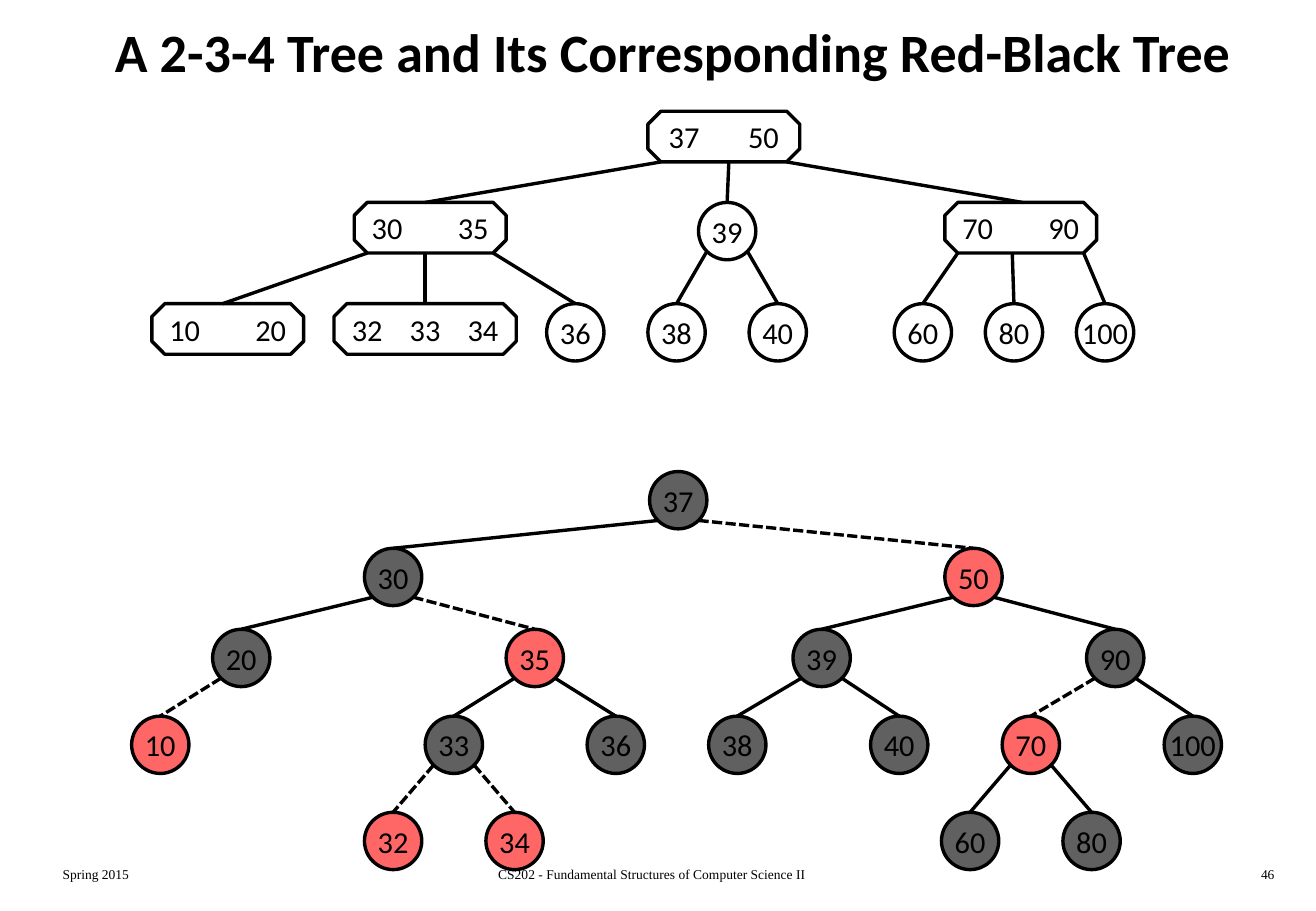
from dataclasses import dataclass
from typing import Optional

from lxml import etree
from pptx import Presentation
from pptx import util as u
from pptx.dml.color import RGBColor
from pptx.enum import dml, shapes, text
from pptx.oxml.ns import qn


@dataclass(frozen=True)
class Theme:
    ink: str = "000000"
    white: str = "FFFFFF"
    red: str = "FF6666"
    black_node: str = "606060"
    body_font: str = "Calibri"
    footer_font: str = "Times New Roman"
    title_size: float = 32
    key_size: float = 18
    footer_size: float = 8
    line_width: float = 2
    circle: float = 34
    box_height: float = 30
    corner: float = 0.257
    key_width: float = 18.25


@dataclass
class Node:
    keys: str
    left: float
    top: float
    width: float
    height: float
    entry: Optional[float] = None
    middle: Optional[float] = None

    @property
    def center(self):
        return self.left + self.width / 2


THEME = Theme()


def write_text(frame, content, *, font=THEME.body_font, size=THEME.key_size, bold=False,
               align=text.PP_ALIGN.CENTER, anchor=text.MSO_ANCHOR.MIDDLE,
               wrap=True, inset=None, tab_step=None):
    frame.word_wrap = wrap
    frame.vertical_anchor = anchor
    if inset is not None:
        frame.margin_left = u.Pt(inset)
        frame.margin_right = frame.margin_top = frame.margin_bottom = 0
    paragraph = frame.paragraphs[0]
    paragraph.alignment = align
    run = paragraph.add_run()
    run.text = content
    run.font.name = font
    run.font.size = u.Pt(size)
    run.font.bold = bold
    run.font.color.rgb = RGBColor.from_string(THEME.ink)
    if tab_step:
        stops = etree.SubElement(paragraph._p.get_or_add_pPr(), qn("a:tabLst"))
        for number in range(1, content.count("\t") + 1):
            etree.SubElement(stops, qn("a:tab"), pos=str(u.Pt(tab_step * number)), algn="l")


class TreeSlide:
    def __init__(self, presentation, theme):
        self.theme = theme
        self.slide = presentation.slides.add_slide(presentation.slide_layouts[6])

    def label(self, content, left, top, width, height, **style):
        box = self.slide.shapes.add_textbox(*map(u.Pt, (left, top, width, height)))
        write_text(box.text_frame, content, **style)

    def outline(self, kind, node, fill):
        shape = self.slide.shapes.add_shape(
            kind, *map(u.Pt, (node.left, node.top, node.width, node.height)))
        shape.shadow.inherit = False
        if fill:
            shape.fill.solid()
            shape.fill.fore_color.rgb = RGBColor.from_string(fill)
        else:
            shape.fill.background()
        self.stroke(shape.line)
        return shape

    def stroke(self, line):
        line.color.rgb = RGBColor.from_string(self.theme.ink)
        line.width = u.Pt(self.theme.line_width)

    def circle(self, key, left, top, fill):
        node = Node(key, left, top, self.theme.circle, self.theme.circle)
        shape = self.outline(shapes.MSO_SHAPE.OVAL, node, fill)
        write_text(shape.text_frame, key, wrap=False, inset=0)
        return node

    def key_box(self, keys, left, top, width, step, entry=None, middle=None):
        theme = self.theme
        node = Node(keys, left, top, width, theme.box_height, entry, middle)
        shape = self.outline(shapes.MSO_SHAPE.OCTAGON, node, None)
        shape.adjustments[0] = theme.corner
        keys_width = step * keys.count(" ") + theme.key_width
        inset = (width - keys_width - theme.corner * node.height) / 2
        write_text(shape.text_frame, keys.replace(" ", "\t"), align=text.PP_ALIGN.LEFT,
                   inset=inset, tab_step=step)
        return node

    def edge(self, parent, child, side, dashed=False):
        is_circle = parent.width == parent.height
        reach = parent.width * 0.354 if is_circle else parent.width / 2 - self.theme.corner * parent.height
        start = parent.center + side * reach
        if side == 0:
            start = parent.middle or parent.center
        bottom = parent.top + parent.height * (0.854 if is_circle else 1)
        line = self.slide.shapes.add_connector(
            shapes.MSO_CONNECTOR.STRAIGHT,
            *map(u.Pt, (start, bottom, child.entry or child.center, child.top)))
        self.stroke(line.line)
        if dashed:
            line.line.dash_style = dml.MSO_LINE.SQUARE_DOT
        etree.SubElement(line._element.spPr, qn("a:effectLst"))


BOXES = [
    ("37 50", 384, 66, 90, 47, None, 432),
    ("30 35", 210, 120, 90, 51, 252, 252),
    ("70 90", 560, 120, 90, 51, 606, 600),
    ("10 20", 90, 180, 90, 51, 132, None),
    ("32 33 34", 198, 180, 108, 34.3, None, None),
]
SINGLES = [("39", 414, 120), ("36", 324, 180), ("38", 384, 180), ("40", 444, 180),
           ("60", 530, 180), ("80", 584, 180), ("100", 638, 180)]
CHILDREN = {
    "37 50": ["30 35", "39", "70 90"],
    "30 35": ["10 20", "32 33 34", "36"],
    "39": ["38", "40"],
    "70 90": ["60", "80", "100"],
}
RED_KEYS = {"50", "35", "10", "70", "32", "34"}
RED_BLACK_ROWS = [
    (279.5, [("37", 385, None)]),
    (325, [("30", 216, "37"), ("50", 560, "37")]),
    (373, [("20", 126, "30"), ("35", 300, "30"), ("39", 470, "50"), ("90", 644, "50")]),
    (424.5, [("10", 78, "20"), ("33", 252, "35"), ("36", 348, "35"), ("38", 420, "39"),
             ("40", 516, "39"), ("70", 594, "90"), ("100", 690, "90")]),
    (481.5, [("32", 216, "33"), ("34", 288, "33"), ("60", 558, "70"), ("80", 630, "70")]),
]


def draw_two_three_four_tree(page):
    nodes = {box[0]: page.key_box(*box) for box in BOXES}
    nodes.update({single[0]: page.circle(*single, THEME.white) for single in SINGLES})
    for parent, children in CHILDREN.items():
        sides = (-1, 0, 1) if len(children) == 3 else (-1, 1)
        for side, child in zip(sides, children):
            page.edge(nodes[parent], nodes[child], side)


def draw_red_black_tree(page):
    nodes = {}
    for top, row in RED_BLACK_ROWS:
        for key, left, parent in row:
            is_red = key in RED_KEYS
            nodes[key] = page.circle(key, left, top, THEME.red if is_red else THEME.black_node)
            if parent:
                side = -1 if left < nodes[parent].left else 1
                page.edge(nodes[parent], nodes[key], side, dashed=is_red)


def main():
    presentation = Presentation()
    presentation.slide_width, presentation.slide_height = u.Pt(780), u.Pt(540)
    page = TreeSlide(presentation, THEME)
    page.label("A 2-3-4 Tree and Its Corresponding Red-Black Tree", 30, 6, 738, 48,
               size=THEME.title_size, bold=True)
    draw_two_three_four_tree(page)
    draw_red_black_tree(page)
    footers = [
        ("Spring 2015", 30, 163, text.PP_ALIGN.LEFT),
        ("CS202 - Fundamental Structures of Computer Science II", 240.5, 292, text.PP_ALIGN.CENTER),
        ("46", 600, 162.5, text.PP_ALIGN.RIGHT),
    ]
    for content, left, width, align in footers:
        page.label(content, left, 510, width, 18, font=THEME.footer_font,
                   size=THEME.footer_size, align=align, anchor=text.MSO_ANCHOR.TOP)
    presentation.save("out.pptx")


if __name__ == "__main__":
    main()
